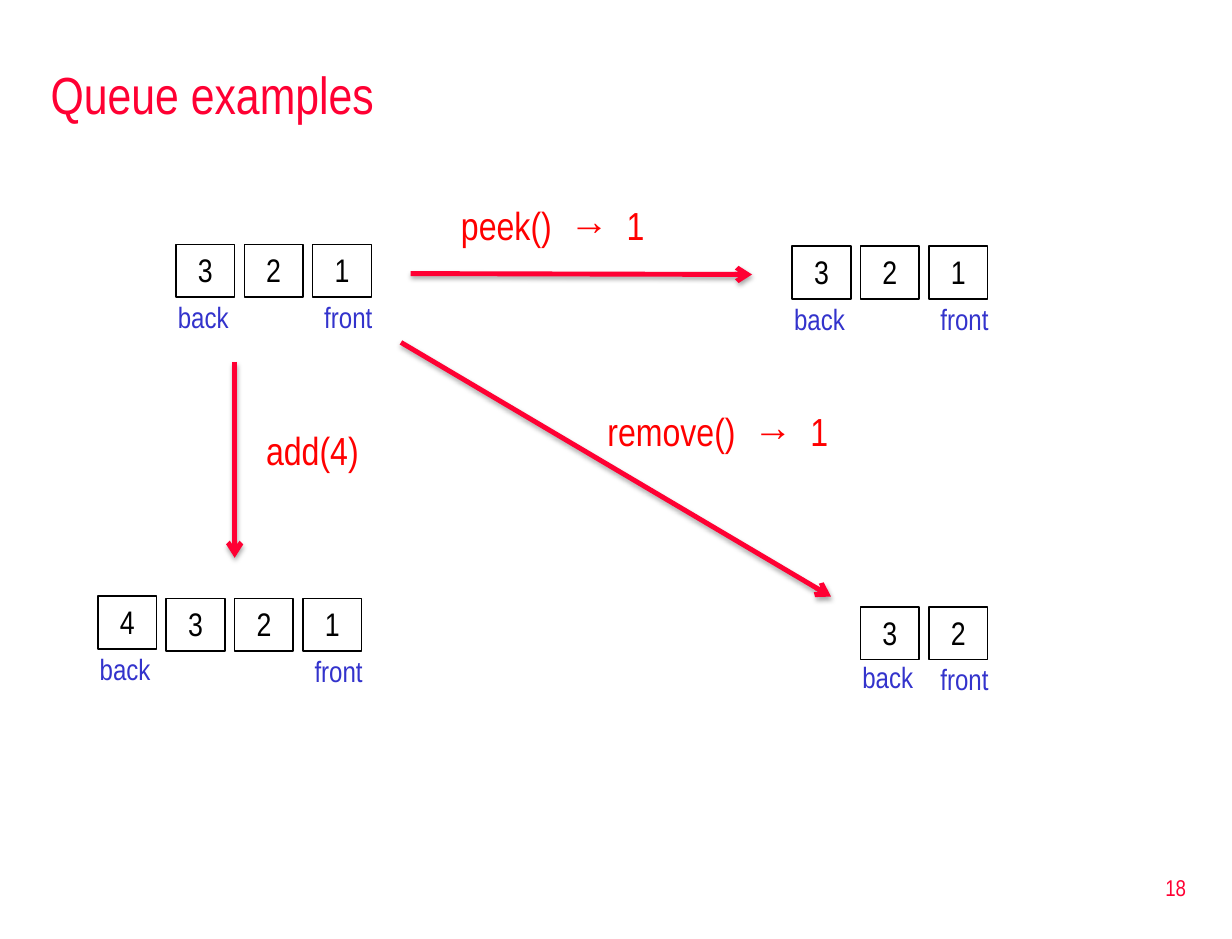
"""Build the slide that shows how queue operations change a queue."""
import lxml.etree
import pptx
import pptx.dml.color
import pptx.enum.shapes
import pptx.enum.text
import pptx.oxml.ns
import pptx.util

Cm = pptx.util.Cm
Pt = pptx.util.Pt
Align = pptx.enum.text.PP_ALIGN
Anchor = pptx.enum.text.MSO_ANCHOR
qn = pptx.oxml.ns.qn

CRIMSON = pptx.dml.color.RGBColor(0xFF, 0x00, 0x33)
RED = pptx.dml.color.RGBColor(0xFF, 0x00, 0x00)
BLUE = pptx.dml.color.RGBColor(0x33, 0x33, 0xCC)
BLACK = pptx.dml.color.RGBColor(0x00, 0x00, 0x00)

FONT = "Arial Narrow"
CELL_WIDTH, CELL_HEIGHT, CELL_PITCH = 1.27, 1.14, 1.48
LABEL_WIDTH, LABEL_HEIGHT, LABEL_DROP = 1.7, 1.02, 1.06
BACK_SHIFT = 0.21


def write_text(frame, text, *, size, color, align=Align.LEFT, anchor=Anchor.TOP):
    frame.word_wrap = True
    frame.auto_size = pptx.enum.text.MSO_AUTO_SIZE.NONE
    frame.vertical_anchor = anchor
    paragraph = frame.paragraphs[0]
    paragraph.alignment = align
    run = paragraph.add_run()
    run.text = text
    run.font.name = FONT
    run.font.size = Pt(size)
    run.font.color.rgb = color


class QueueSlide:
    def __init__(self, deck):
        self.slide = deck.slides.add_slide(deck.slide_layouts[5])

    def title(self, text, left, top, width, height):
        heading = self.slide.shapes.title
        heading.left, heading.top = Cm(left), Cm(top)
        heading.width, heading.height = Cm(width), Cm(height)
        write_text(heading.text_frame, text, size=32, color=CRIMSON, anchor=Anchor.MIDDLE)

    def label(self, text, left, top, width, height, *, parent=None, **style):
        shapes = (parent or self.slide).shapes
        caption = shapes.add_textbox(Cm(left), Cm(top), Cm(width), Cm(height))
        write_text(caption.text_frame, text, **style)

    def cell(self, group, value, left, top):
        box = group.shapes.add_shape(
            pptx.enum.shapes.MSO_SHAPE.RECTANGLE,
            Cm(left), Cm(top), Cm(CELL_WIDTH), Cm(CELL_HEIGHT))
        box.shadow.inherit = False
        box.fill.background()
        box.line.color.rgb = BLACK
        box.line.width = Pt(1)
        write_text(box.text_frame, value, size=20, color=BLACK, align=Align.CENTER)

    def queue(self, values, left, top, *, cell_lift=0, label_lift=0):
        group = self.slide.shapes.add_group_shape()
        for index, value in enumerate(values):
            lift = cell_lift if index == 0 else 0
            self.cell(group, value, left + index * CELL_PITCH, top - lift)
        front = left + (len(values) - 1) * CELL_PITCH
        for end, end_left, lift in (("front", front, 0),
                                    ("back", left - BACK_SHIFT, label_lift)):
            self.label(end, end_left, top + LABEL_DROP - lift, LABEL_WIDTH, LABEL_HEIGHT,
                       parent=group, size=18, color=BLUE)

    def arrow(self, start, end):
        connector = self.slide.shapes.add_connector(
            pptx.enum.shapes.MSO_CONNECTOR.STRAIGHT,
            *(Cm(length) for length in start + end))
        connector.line.color.rgb = CRIMSON
        connector.line.width = Pt(3)
        properties = connector.line._get_or_add_ln()
        lxml.etree.SubElement(properties, qn("a:tailEnd"), type="arrow")
        effects = lxml.etree.SubElement(properties.getparent(), qn("a:effectLst"))
        shadow = lxml.etree.SubElement(
            effects, qn("a:outerShdw"), blurRad=str(Pt(3.1)), dist=str(Pt(1.8)),
            dir="5400000", rotWithShape="0")
        tint = lxml.etree.SubElement(shadow, qn("a:srgbClr"), val=str(BLACK))
        lxml.etree.SubElement(tint, qn("a:alpha"), val="35000")

    def operation(self, call, left, top, width, start, end):
        self.label(call, left, top, width, 1.3, size=24, color=RED)
        self.arrow(start, end)


def main():
    deck = pptx.Presentation()
    deck.slide_width, deck.slide_height = Cm(26.67), Cm(20.32)

    page = QueueSlide(deck)
    page.title("Queue examples", 0.84, 1.07, 25.2, 1.9)
    page.label("18", 20.37, 18.52, 5.56, 1.35, size=14, color=CRIMSON,
               align=Align.RIGHT, anchor=Anchor.MIDDLE)

    page.queue("321", 3.81, 5.29)
    page.queue("4321", 2.12, 12.95, cell_lift=0.05, label_lift=0.05)
    page.queue("32", 18.63, 13.13, label_lift=0.05)
    page.queue("321", 17.15, 5.33)

    page.operation("peek()  →  1", 9.73, 4.24, 4.88, (8.89, 5.92), (16.28, 5.94))
    page.operation("add(4)", 5.51, 9.1, 2.97, (5.08, 7.83), (5.08, 12.07))
    page.operation("remove()  →  1", 12.9, 8.69, 6.35, (8.68, 7.41), (17.99, 12.91))

    deck.save("out.pptx")


if __name__ == "__main__":
    main()
